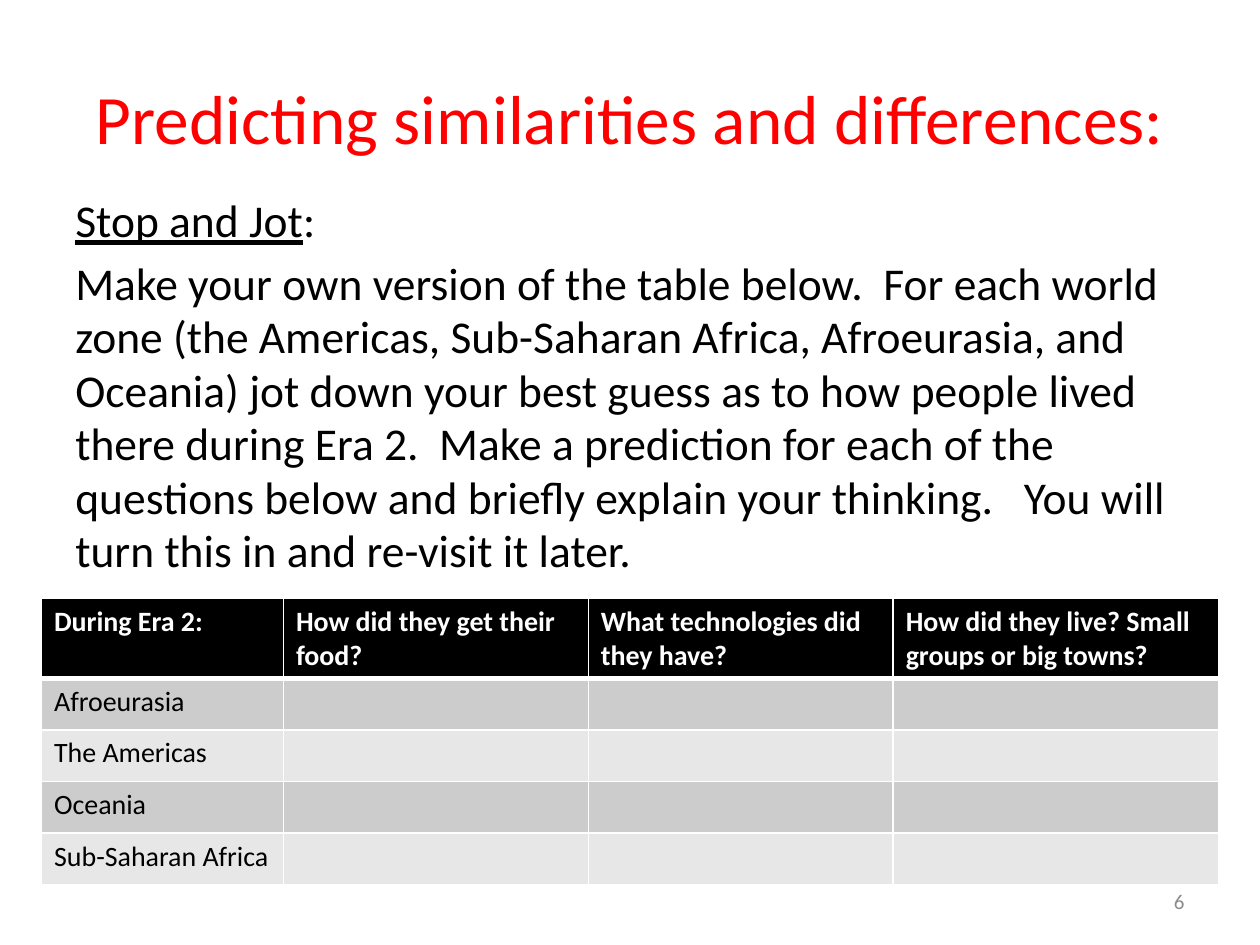
from lxml import etree
from pptx import Presentation, util as u
from pptx.dml.color import RGBColor
from pptx.enum import text as t
from pptx.oxml.ns import qn

RED = RGBColor(255, 0, 0)
BLACK = RGBColor(0, 0, 0)
WHITE = RGBColor(255, 255, 255)
GREY = RGBColor(0x8C, 0x8C, 0x8C)
DARK = RGBColor(0xCC, 0xCC, 0xCC)
LIGHT = RGBColor(0xE7, 0xE7, 0xE7)
MID, TOP = t.MSO_ANCHOR.MIDDLE, t.MSO_ANCHOR.TOP
LEFT, MIDDLE, RIGHT = t.PP_ALIGN.LEFT, t.PP_ALIGN.CENTER, t.PP_ALIGN.RIGHT

TITLE = "Predicting similarities and differences:"
TASK = (
    "Make your own version of the table below.  For each world zone "
    "(the Americas, Sub-Saharan Africa, Afroeurasia, and Oceania) jot down "
    "your best guess as to how people lived there during Era 2.  Make a "
    "prediction for each of the questions below and briefly explain your "
    "thinking.   You will turn this in and re-visit it later."
)
BOXES = [
    ((0.5, 0.3, 9, 1.25), MID, MIDDLE, dict(size=39.6, color=RED), [[(TITLE, {})]]),
    ((0.5, 1.5, 9.17, 3.67), TOP, LEFT, dict(size=26, color=BLACK),
     [[("Stop and Jot", dict(underline=True)), (":", {})], [(TASK, {})]]),
    ((7.17, 6.95, 2.33, 0.4), MID, RIGHT, dict(size=12, color=GREY), [[("6", {})]]),
]
HEADS = ["During Era 2:", "How did they get their food?",
         "What technologies did they have?",
         "How did they live? Small groups or big towns?"]
ZONES = ["Afroeurasia", "The Americas", "Oceania", "Sub-Saharan Africa"]
COLS = [1.92, 2.42, 2.42, 2.58]
ROWS = [0.63] + [0.41] * len(ZONES)


def style(font, size, color, **more):
    form = dict(name="Calibri", size=u.Pt(size), **more)
    for key, val in form.items():
        setattr(font, key, val)
    font.color.rgb = color


def add_text(slide, place, anchor, align, look, paras):
    frame = slide.shapes.add_textbox(*map(u.Inches, place)).text_frame
    frame.word_wrap = True
    frame.vertical_anchor = anchor
    for i, parts in enumerate(paras):
        para = frame.paragraphs[0] if i == 0 else frame.add_paragraph()
        para.alignment = align
        if len(paras) > 1:
            para.line_spacing = 0.98
        if i:
            para.space_before = u.Pt(look["size"] * 0.2)
        for words, more in parts:
            run = para.add_run()
            run.text = words
            style(run.font, **look, **more)


def edge(cell, sides):
    props = cell._tc.get_or_add_tcPr()
    for side, width in sides.items():
        line = etree.SubElement(props, qn("a:ln" + side), w=str(u.Pt(width)))
        fill = etree.SubElement(line, qn("a:solidFill"))
        etree.SubElement(fill, qn("a:srgbClr"), val=str(WHITE))


def add_grid(slide):
    place = (0.33, 4.75, sum(COLS), sum(ROWS))
    grid = slide.shapes.add_table(len(ROWS), len(COLS), *map(u.Inches, place)).table
    for col, width in zip(grid.columns, COLS):
        col.width = u.Inches(width)
    for row, height in zip(grid.rows, ROWS):
        row.height = u.Inches(height)
    words = [HEADS] + [[zone, "", "", ""] for zone in ZONES]
    for r, line in enumerate(words):
        head = r == 0
        shade = BLACK if head else DARK if r % 2 else LIGHT
        for c, label in enumerate(line):
            cell = grid.cell(r, c)
            edge(cell, dict(L=1, R=1, T=3 if r == 1 else 1, B=3 if head else 1))
            cell.fill.solid()
            cell.fill.fore_color.rgb = shade
            cell.text = label
            para = cell.text_frame.paragraphs[0]
            for item in [para, *para.runs]:
                style(item.font, 16, WHITE if head else BLACK, bold=head)


def main():
    deck = Presentation()
    deck.slide_width, deck.slide_height = u.Inches(10), u.Inches(7.5)
    slide = deck.slides.add_slide(deck.slide_layouts[6])
    for box in BOXES:
        add_text(slide, *box)
    add_grid(slide)
    deck.save("out.pptx")


if __name__ == "__main__":
    main()
